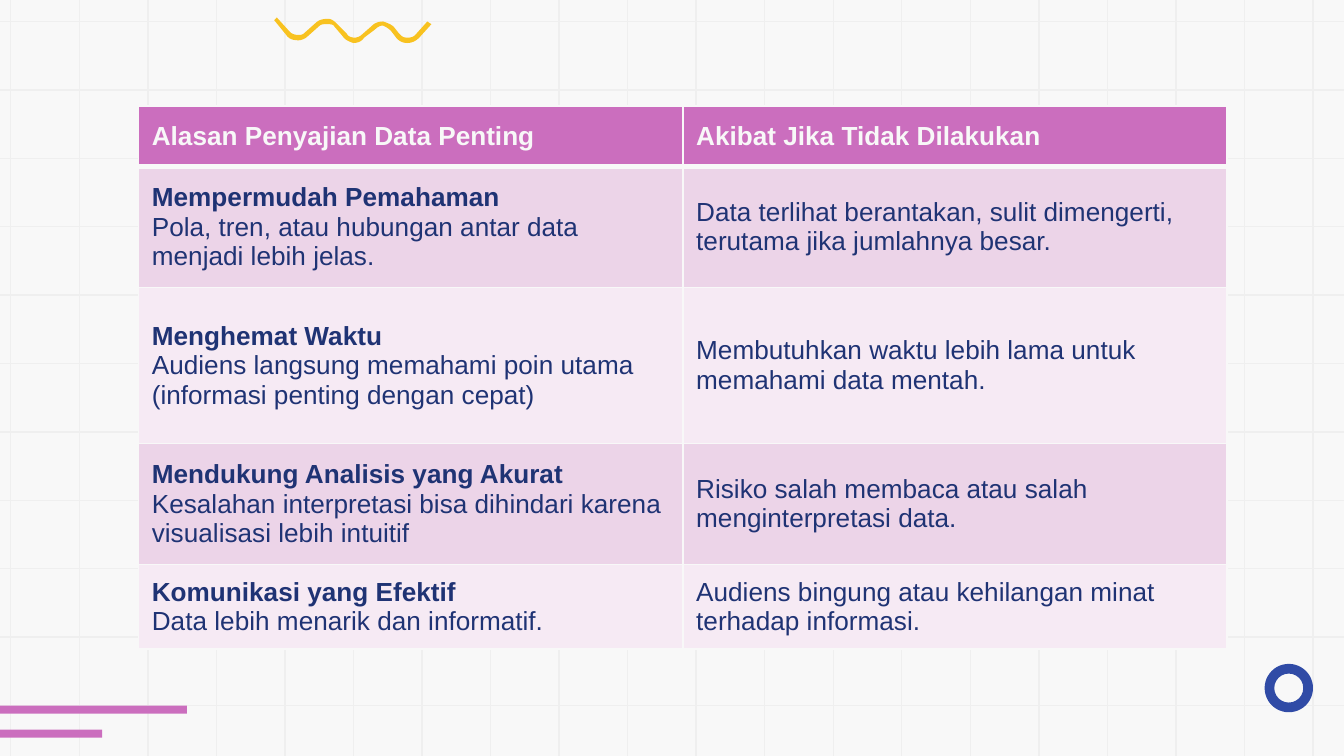
import lxml.etree
import pptx
import pptx.dml.color
import pptx.enum.shapes
import pptx.enum.text
import pptx.oxml.ns
import pptx.util

Inches = pptx.util.Inches
Pt = pptx.util.Pt
qn = pptx.oxml.ns.qn
SHAPE = pptx.enum.shapes.MSO_SHAPE
PAPER, GRID, PINK = "F8F8F8", "EFEFEF", "CB6EBE"
NAVY, BLUE, YELLOW = "1F3374", "304BA6", "F8C220"


def color(hex_string):
    return pptx.dml.color.RGBColor.from_string(hex_string)


def paint(shape, fill):
    shape.shadow.inherit = False
    shape.fill.solid()
    shape.fill.fore_color.rgb = color(fill)
    shape.line.fill.background()


deck = pptx.Presentation()
deck.slide_width = Inches(10)
deck.slide_height = Inches(10) * 9 // 16
slide = deck.slides.add_slide(deck.slide_layouts[6])
slide.background.fill.solid()
slide.background.fill.fore_color.rgb = color(PAPER)

# Background grid
row_gap, column_gap = (5.25 - 0.16) / 10, (9.77 - 0.08) / 19
grid_lines = [(10, 0.16 + row_gap * row, 0, 0.16 + row_gap * row) for row in range(11)]
grid_lines += [(0.08 + column_gap * column, -0.18, 0.08 + column_gap * column, 5.8)
               for column in range(20)]
for ends in grid_lines:
    connector = slide.shapes.add_connector(
        pptx.enum.shapes.MSO_CONNECTOR.STRAIGHT, *[Inches(value) for value in ends])
    connector.line.color.rgb = color(GRID)
    connector.line.width = Pt(0.75)
    lxml.etree.SubElement(connector.element.spPr, qn("a:effectLst"))

# Corner bars and ring
for top, width in [(5.25, 1.39), (5.43, 0.76)]:
    bar = slide.shapes.add_shape(
        SHAPE.RECTANGLE, 0, Inches(top), Inches(width), Inches(0.06))
    paint(bar, PINK)
ring = slide.shapes.add_shape(
    SHAPE.DONUT, Inches(9.41), Inches(4.94), Inches(0.36), Inches(0.36))
ring.adjustments[0] = 0.2
paint(ring, BLUE)

# Squiggle outline: two numbers are a line's end, six are a Bezier curve
squiggle_start = (2.06, 0.13)
squiggle_segments = [
    (2.04, 0.15), (2.13, 0.26),
    (2.15, 0.29, 2.18, 0.3, 2.22, 0.3), (2.24, 0.3, 2.27, 0.29, 2.29, 0.27),
    (2.38, 0.19),
    (2.39, 0.18, 2.41, 0.18, 2.43, 0.18), (2.46, 0.18, 2.48, 0.18, 2.49, 0.2),
    (2.55, 0.27),
    (2.57, 0.3, 2.6, 0.31, 2.63, 0.32), (2.66, 0.32, 2.69, 0.31, 2.71, 0.28),
    (2.79, 0.22),
    (2.81, 0.2, 2.83, 0.19, 2.85, 0.19), (2.87, 0.2, 2.89, 0.21, 2.91, 0.23),
    (2.94, 0.27),
    (2.96, 0.3, 2.99, 0.32, 3.03, 0.32), (3.06, 0.32, 3.09, 0.31, 3.12, 0.28),
    (3.21, 0.18), (3.18, 0.16), (3.09, 0.26),
    (3.07, 0.28, 3.05, 0.28, 3.03, 0.28), (3, 0.28, 2.99, 0.27, 2.97, 0.25),
    (2.93, 0.2),
    (2.91, 0.18, 2.88, 0.17, 2.85, 0.16), (2.82, 0.16, 2.79, 0.17, 2.77, 0.19),
    (2.69, 0.26),
    (2.68, 0.27, 2.66, 0.28, 2.64, 0.28), (2.61, 0.28, 2.59, 0.27, 2.58, 0.25),
    (2.51, 0.18),
    (2.49, 0.16, 2.47, 0.14, 2.44, 0.14), (2.4, 0.14, 2.37, 0.15, 2.35, 0.17),
    (2.26, 0.25),
    (2.25, 0.26, 2.23, 0.26, 2.22, 0.26), (2.19, 0.26, 2.17, 0.25, 2.16, 0.24),
]
points = [squiggle_start]
for segment in squiggle_segments:
    if len(segment) == 2:
        points.append(segment)
        continue
    x0, y0 = points[-1]
    x1, y1, x2, y2, x3, y3 = segment
    for step in range(1, 9):
        t = step / 8
        u = 1 - t
        weights = (u ** 3, 3 * u * u * t, 3 * u * t * t, t ** 3)
        points.append((sum(w * x for w, x in zip(weights, (x0, x1, x2, x3))),
                       sum(w * y for w, y in zip(weights, (y0, y1, y2, y3)))))
outline = [(Inches(x), Inches(y)) for x, y in points]
builder = slide.shapes.build_freeform(*outline[0])
builder.add_line_segments(outline[1:], close=True)
paint(builder.convert_to_shape(), YELLOW)

# Table: each cell is a list of paragraphs, each paragraph a list of lines.
# The first line of a reason is bold.
rows = [
    (0.45, PINK, [["Alasan Penyajian Data Penting"]], [["Akibat Jika Tidak Dilakukan"]]),
    (0.9, "ECD4E8",
     [["Mempermudah Pemahaman"],
      ["Pola, tren, atau hubungan antar data menjadi lebih jelas."]],
     [["Data terlihat berantakan, sulit dimengerti, terutama jika jumlahnya besar."]]),
    (1.16, "F6EAF4",
     [["Menghemat Waktu",
       "Audiens langsung memahami poin utama (informasi penting dengan cepat)"]],
     [["Membutuhkan waktu lebih lama untuk memahami data mentah."]]),
    (0.9, "ECD4E8",
     [["Mendukung Analisis yang Akurat",
       "Kesalahan interpretasi bisa dihindari karena visualisasi lebih intuitif"]],
     [["Risiko salah membaca atau salah menginterpretasi data."]]),
    (0.63, "F6EAF4",
     [["Komunikasi yang Efektif"], ["Data lebih menarik dan informatif."]],
     [["Audiens bingung atau kehilangan minat terhadap informasi."]]),
]
table_height = sum(row[0] for row in rows)
table = slide.shapes.add_table(
    len(rows), 2, Inches(1.03), Inches(0.79), Inches(8.1), Inches(table_height)).table
table.horz_banding = False
for row_index, (height, fill, *cells) in enumerate(rows):
    table.rows[row_index].height = Inches(height)
    for column_index, paragraphs in enumerate(cells):
        cell = table.cell(row_index, column_index)
        cell.vertical_anchor = pptx.enum.text.MSO_ANCHOR.MIDDLE
        properties = cell._tc.get_or_add_tcPr()
        for side in ("lnL", "lnR", "lnT", "lnB"):
            under_header = (row_index, side) in [(0, "lnB"), (1, "lnT")]
            border = lxml.etree.SubElement(
                properties, qn("a:" + side), w=str(Pt(3 if under_header else 1)))
            border_fill = lxml.etree.SubElement(border, qn("a:solidFill"))
            lxml.etree.SubElement(border_fill, qn("a:srgbClr"), val=PAPER)
        cell.fill.solid()
        cell.fill.fore_color.rgb = color(fill)
        frame = cell.text_frame
        for para_index, lines in enumerate(paragraphs):
            para = frame.add_paragraph() if para_index else frame.paragraphs[0]
            para.font.name = "Arial"
            para.font.size = Pt(14)
            para.font.color.rgb = color(NAVY if row_index else PAPER)
            for line_index, line in enumerate(lines):
                if line_index:
                    para.add_line_break()
                span = para.add_run()
                span.text = line
                is_reason_title = column_index == para_index == line_index == 0
                span.font.bold = row_index == 0 or is_reason_title

deck.save("out.pptx")
